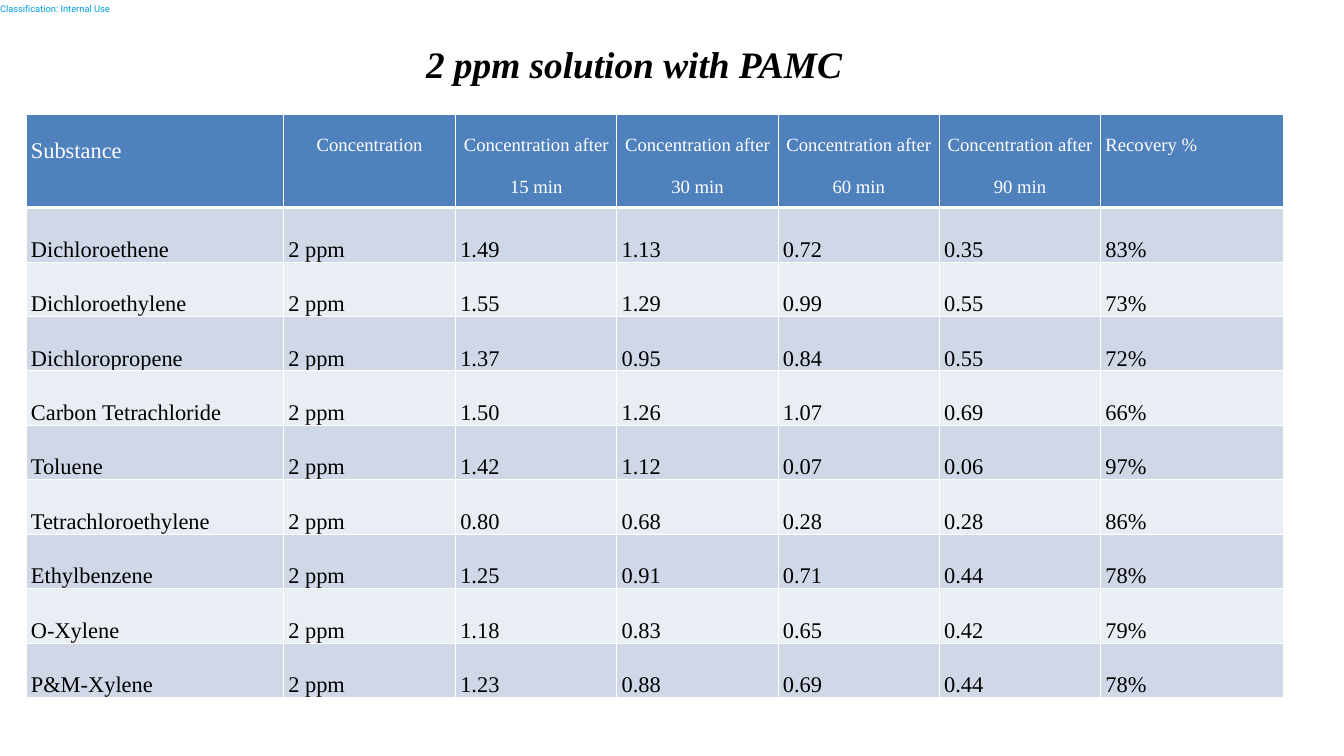
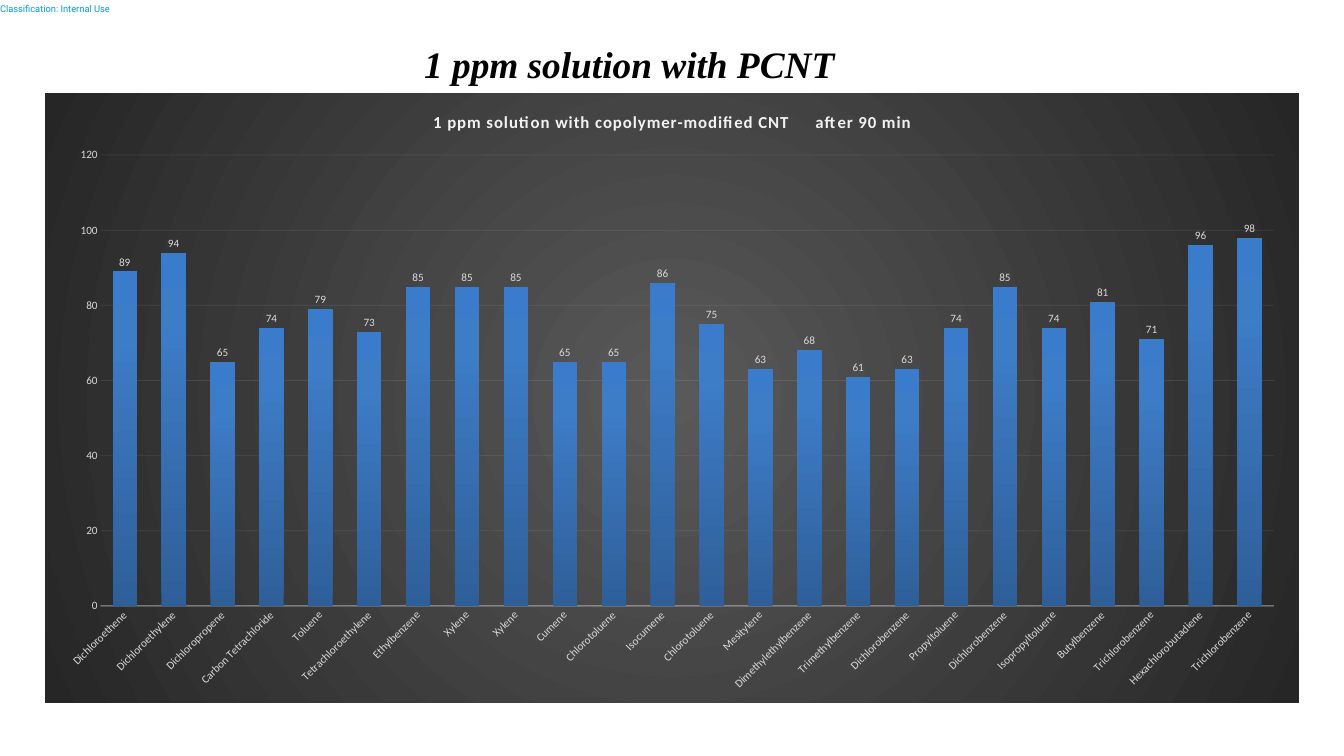
"""Build two slides on solution tests: a result table and a column chart."""
from lxml import etree
from pptx import Presentation
from pptx.chart import data
from pptx.dml.color import RGBColor
from pptx.enum import chart as ec, text as et
from pptx.oxml import ns, parse_xml
from pptx.util import Inches, Pt

HUES = {
    "label": "009FDF", "ink": "000000", "white": "FFFFFF", "head": "4F81BD",
    "odd": "D0D8E8", "even": "E9EDF4", "pale": "F2F2F2", "tick": "D9D9D9",
}
AREA = [(0, "595959"), (100, "262626")]
BARS = [(0, "2F5F99"), (80, "3D7CC7"), (100, "3A7CCB")]
SERIF = "Times New Roman"
LABEL = "Classification: Internal Use"
TITLES = [" 2 ppm solution with PAMC", "1 ppm solution with PCNT"]

DOSE = "2 ppm"
HEAD = ["Substance", "Concentration",
        *(f"Concentration after {m} min" for m in (15, 30, 60, 90)), "Recovery %"]
ROWS = [
    ("Dichloroethene", "1.49", "1.13", "0.72", "0.35", "83%"),
    ("Dichloroethylene", "1.55", "1.29", "0.99", "0.55", "73%"),
    ("Dichloropropene", "1.37", "0.95", "0.84", "0.55", "72%"),
    ("Carbon Tetrachloride", "1.50", "1.26", "1.07", "0.69", "66%"),
    ("Toluene", "1.42", "1.12", "0.07", "0.06", "97%"),
    ("Tetrachloroethylene", "0.80", "0.68", "0.28", "0.28", "86%"),
    ("Ethylbenzene", "1.25", "0.91", "0.71", "0.44", "78%"),
    ("O-Xylene", "1.18", "0.83", "0.65", "0.42", "79%"),
    ("P&M-Xylene", "1.23", "0.88", "0.69", "0.44", "78%"),
]
WIDTHS = [3.83, 2.56, 2.4, 2.4, 2.4, 2.4, 2.72]
TALLS = [1.39] + [0.81] * len(ROWS)

CAPTION = ["1 ppm solution with copolymer-modified CNT", " ", "after 90 min"]
SHARES = [
    ("Dichloroethene", 89), ("Dichloroethylene", 94), ("Dichloropropene", 65),
    ("Carbon Tetrachloride", 74), ("Toluene", 79), ("Tetrachloroethylene", 73),
    ("Ethylbenzene", 85), ("Xylene", 85), ("Xylene", 85), ("Cumene", 65),
    ("Chlorotoluene", 65), ("Isocumene", 86), ("Chlorotoluene", 75),
    ("Mesitylene", 63), ("Dimethylethylbenzene", 68), ("Trimethylbenzene", 61),
    ("Dichlorobenzene", 63), ("Propyltoluene", 74), ("Dichlorobenzene", 85),
    ("Isopropyltoluene", 74), ("Butylbenzene", 81), ("Trichlorobenzene", 71),
    ("Hexachlorobutadiene", 96), ("Trichlorobenzene", 98),
]


def style(font, name, size, hue, bold=False, slant=False):
    font.name, font.size = name, Pt(size)
    font.bold, font.italic = bold, slant
    font.color.rgb = RGBColor.from_string(HUES[hue])


def box(*sides):
    return [Inches(side) for side in sides]


def pad(frame, side, edge):
    frame.margin_left = frame.margin_right = Inches(side)
    frame.margin_top = frame.margin_bottom = Inches(edge)


def start(deck, name):
    slide = deck.slides.add_slide(deck.slide_layouts[5])
    label = slide.shapes.add_textbox(*box(0, 0, 2.01, 0.26)).text_frame
    pad(label, 0, 0)
    label.word_wrap = False
    label.auto_size = et.MSO_AUTO_SIZE.SHAPE_TO_FIT_TEXT
    label.vertical_anchor = et.MSO_ANCHOR.MIDDLE
    label.text = LABEL
    style(label.paragraphs[0].font, "Roboto", 10, "label")

    title = slide.shapes.title
    title.left, title.top, title.width, title.height = box(5.17, 0.56, 8.39, 0.77)
    frame = title.text_frame
    frame.text = name
    frame.word_wrap = True
    frame.auto_size = et.MSO_AUTO_SIZE.SHAPE_TO_FIT_TEXT
    frame.vertical_anchor = et.MSO_ANCHOR.TOP
    frame.paragraphs[0].alignment = et.PP_ALIGN.CENTER
    style(frame.paragraphs[0].font, SERIF, 40, "ink", True, True)
    return slide


def border(cell, top, base):
    props = cell._tc.get_or_add_tcPr()
    for spot, (side, wide) in enumerate(zip("LRTB", (1, 1, top, base))):
        props.insert(spot, parse_xml(
            f'<a:ln{side} {ns.nsdecls("a")} w="{Pt(wide)}"><a:solidFill>'
            f'<a:srgbClr val="{HUES["white"]}"/></a:solidFill></a:ln{side}>'))


def add_grid(slide):
    cells = [HEAD] + [(row[0], DOSE, *row[1:]) for row in ROWS]
    table = slide.shapes.add_table(
        len(cells), len(HEAD), *box(0.39, 1.7, sum(WIDTHS), sum(TALLS))).table
    table.horz_banding = False
    for col, wide in zip(table.columns, WIDTHS):
        col.width = Inches(wide)
    for r, (line, tall) in enumerate(zip(cells, TALLS)):
        table.rows[r].height = Inches(tall)
        band = "head" if r == 0 else "odd" if r % 2 else "even"
        for c, words in enumerate(line):
            cell = table.cell(r, c)
            cell.text = words
            pad(cell, 0.07, 0)
            cell.vertical_anchor = et.MSO_ANCHOR.BOTTOM if r else et.MSO_ANCHOR.TOP
            cell.fill.solid()
            cell.fill.fore_color.rgb = RGBColor.from_string(HUES[band])
            border(cell, 3 if r == 1 else 1, 1 if r else 3)
            para = cell.text_frame.paragraphs[0]
            mid = r == 0 and 0 < c < len(HEAD) - 1
            para.alignment = et.PP_ALIGN.CENTER if mid else et.PP_ALIGN.JUSTIFY
            para.line_spacing, para.space_after = 2.0, Pt(10)
            style(para.font, SERIF, 24 if r or c == 0 else 20,
                  "ink" if r else "white")


def blend(stops, course):
    marks = "".join(f'<a:gs pos="{pos * 1000}"><a:srgbClr val="{hue}"/></a:gs>'
                    for pos, hue in stops)
    return parse_xml(f'<c:spPr {ns.nsdecls("c", "a")}><a:gradFill><a:gsLst>{marks}'
                     f'</a:gsLst>{course}</a:gradFill><a:ln><a:noFill/></a:ln></c:spPr>')


def rule(line, axis, route, wide, share):
    line.width = Pt(wide)
    line.color.rgb = RGBColor.from_string(HUES["pale"])
    tint = axis._element.xpath(f"{route}//a:srgbClr")[0]
    etree.SubElement(tint, ns.qn("a:alpha"), val=str(share * 1000))


def add_bars(slide):
    stats = data.CategoryChartData(number_format="0")
    stats.categories = [name for name, _ in SHARES]
    stats.add_series("Series 1", [share for _, share in SHARES])
    chart = slide.shapes.add_chart(ec.XL_CHART_TYPE.COLUMN_CLUSTERED,
                                   *box(0.67, 1.39, 18.66, 9.07), stats).chart
    chart.has_legend = False
    style(chart.font, "Calibri", 10, "ink")
    chart._chartSpace.find(ns.qn("c:chart")).addnext(blend(
        AREA, '<a:path path="circle"><a:fillToRect l="50000" t="50000" '
              'r="50000" b="50000"/></a:path>'))

    para = chart.chart_title.text_frame.paragraphs[0]
    style(para.font, "Calibri", 18, "pale", True)
    for words, gap in zip(CAPTION, (100, 2300, 100)):
        run = para.add_run()
        run.text = words
        style(run.font, "Calibri", 18, "pale", True)
        run._r.get_or_add_rPr().set("spc", str(gap))

    plot = chart.plots[0]
    plot.vary_by_categories = False
    plot.gap_width, plot.overlap = 100, -24
    plot.has_data_labels = True
    tags = plot.data_labels
    tags.show_value = True
    tags.position = ec.XL_LABEL_POSITION.OUTSIDE_END
    tags.number_format, tags.number_format_is_linked = "0", False
    bars = plot.series[0]._element
    bars.find(ns.qn("c:tx")).addnext(
        blend(BARS, '<a:lin ang="16200000" scaled="0"/>'))

    cats, vals = chart.category_axis, chart.value_axis
    for axis in (cats, vals):
        axis.major_tick_mark = axis.minor_tick_mark = ec.XL_TICK_MARK.NONE
    for part in (tags, cats.tick_labels, vals.tick_labels):
        style(part.font, "Calibri", 12, "tick")
    cats._element.xpath("./c:txPr/a:bodyPr")[0].set("rot", "-2700000")
    rule(cats.format.line, cats, "./c:spPr", 1, 54)
    rule(vals.major_gridlines.format.line, vals, "./c:majorGridlines", 0.75, 10)
    vals.format.line.fill.background()
    vals.minimum_scale, vals.maximum_scale, vals.major_unit = 0, 120, 20
    vals.tick_labels.number_format = "0"
    vals.tick_labels.number_format_is_linked = False


def main():
    deck = Presentation()
    deck.slide_width, deck.slide_height = box(20, 11.25)
    for name, fill in zip(TITLES, (add_grid, add_bars)):
        fill(start(deck, name))
    deck.save("out.pptx")


if __name__ == "__main__":
    main()
